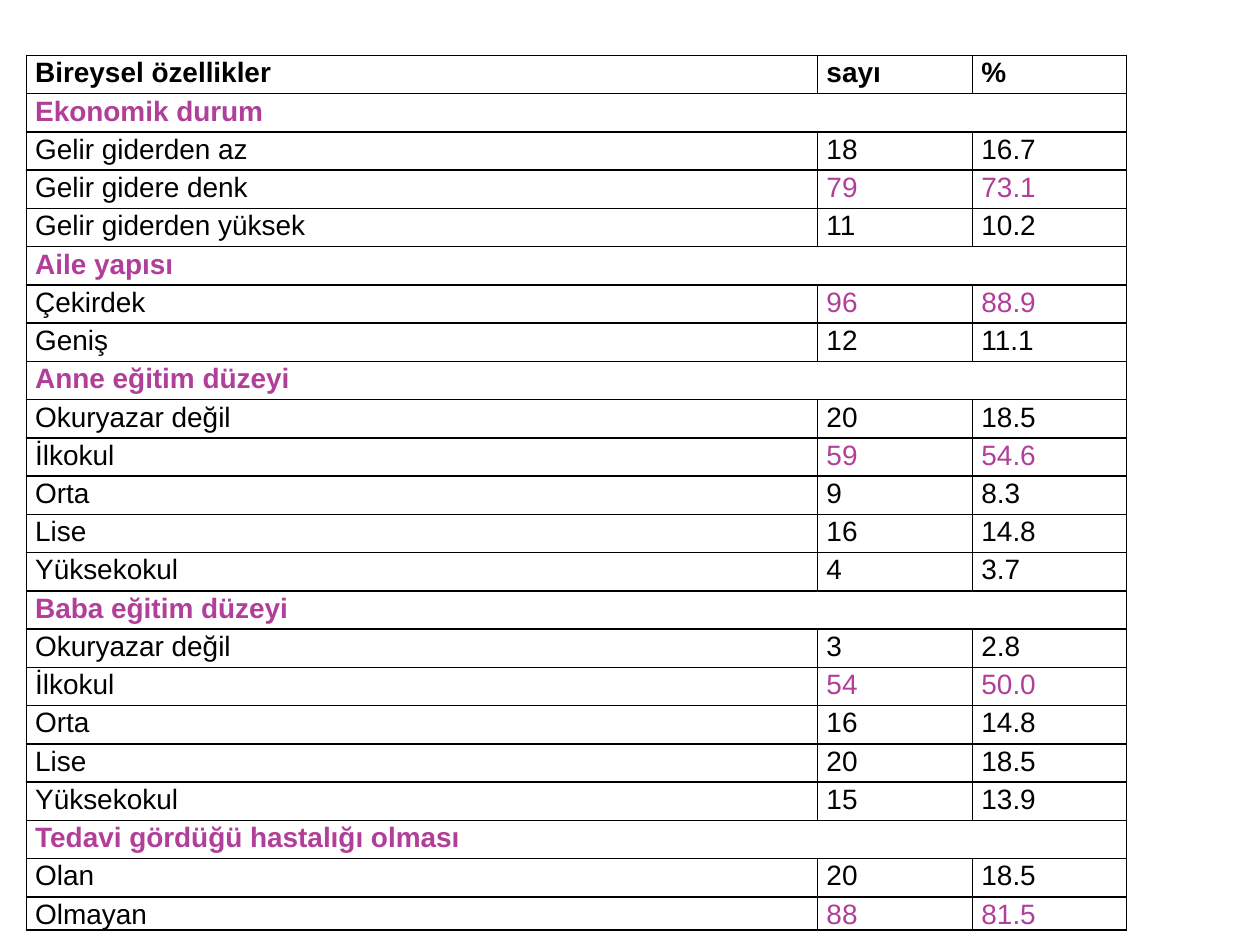
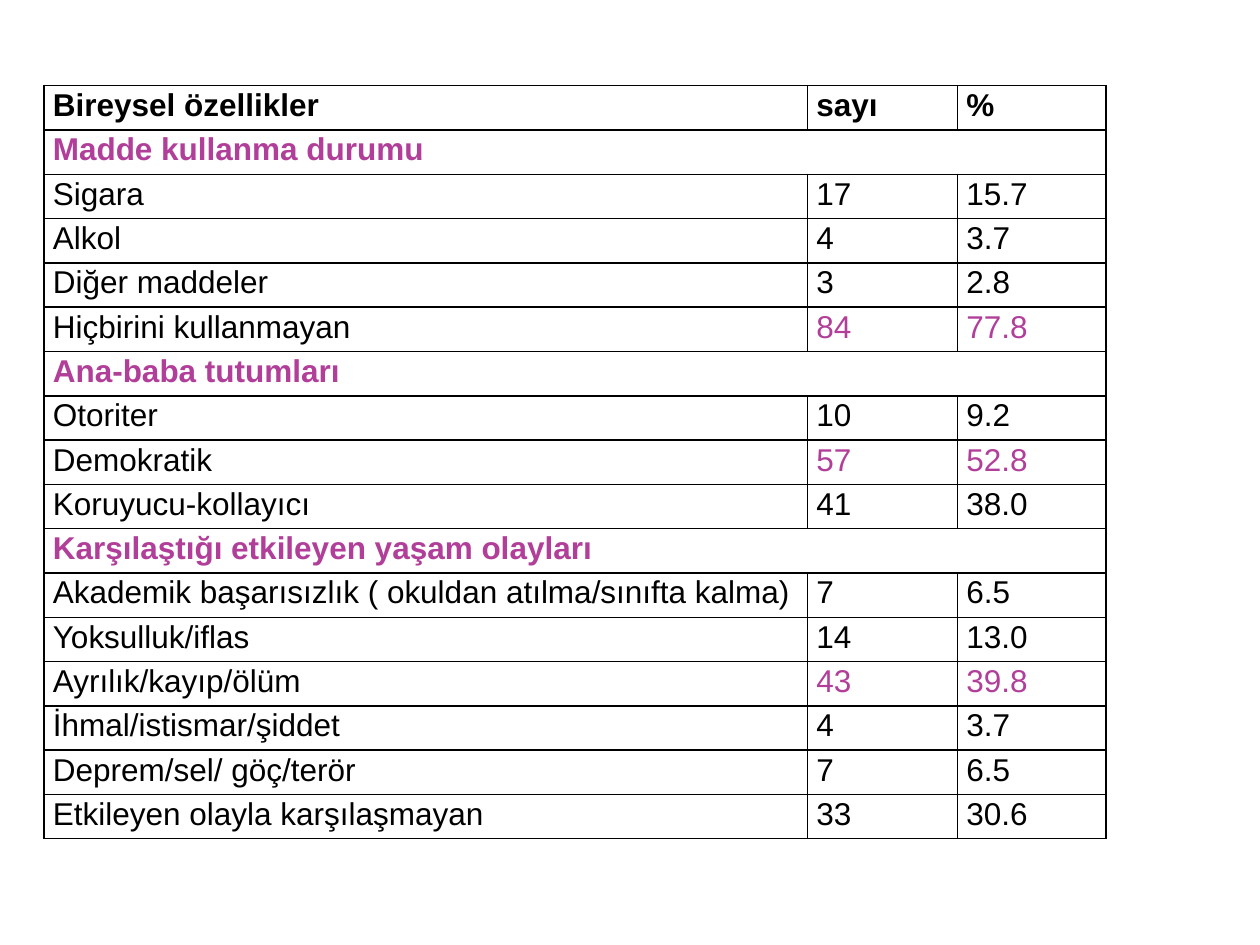
from dataclasses import dataclass

import pptx
import pptx.dml.color
import pptx.oxml
import pptx.oxml.ns
import pptx.util

Inches = pptx.util.Inches
Pt = pptx.util.Pt
RGB = pptx.dml.color.RGBColor.from_string

HEADER = ("Bireysel özellikler", "sayı", "%")

FAMILY_GROUPS = {
    "Ekonomik durum": [
        ("Gelir giderden az", 18, 16.7),
        ("Gelir gidere denk", 79, 73.1),
        ("Gelir giderden yüksek", 11, 10.2),
    ],
    "Aile yapısı": [
        ("Çekirdek", 96, 88.9),
        ("Geniş", 12, 11.1),
    ],
    "Anne eğitim düzeyi": [
        ("Okuryazar değil", 20, 18.5),
        ("İlkokul", 59, 54.6),
        ("Orta", 9, 8.3),
        ("Lise", 16, 14.8),
        ("Yüksekokul", 4, 3.7),
    ],
    "Baba eğitim düzeyi": [
        ("Okuryazar değil", 3, 2.8),
        ("İlkokul", 54, 50.0),
        ("Orta", 16, 14.8),
        ("Lise", 20, 18.5),
        ("Yüksekokul", 15, 13.9),
    ],
    "Tedavi gördüğü hastalığı olması": [
        ("Olan", 20, 18.5),
        ("Olmayan", 88, 81.5),
    ],
}

LIFE_GROUPS = {
    "Madde kullanma durumu": [
        ("Sigara", 17, 15.7),
        ("Alkol", 4, 3.7),
        ("Diğer maddeler", 3, 2.8),
        ("Hiçbirini kullanmayan", 84, 77.8),
    ],
    "Ana-baba tutumları": [
        ("Otoriter", 10, 9.2),
        ("Demokratik", 57, 52.8),
        ("Koruyucu-kollayıcı", 41, 38.0),
    ],
    "Karşılaştığı etkileyen yaşam olayları": [
        ("Akademik başarısızlık ( okuldan atılma/sınıfta kalma)", 7, 6.5),
        ("Yoksulluk/iflas", 14, 13.0),
        ("Ayrılık/kayıp/ölüm", 43, 39.8),
        ("İhmal/istismar/şiddet", 4, 3.7),
        ("Deprem/sel/ göç/terör", 7, 6.5),
        ("Etkileyen olayla karşılaşmayan", 33, 30.6),
    ],
}

# Lengths in inches; last_row is the height of the bottom row when it differs
SLIDES = [
    dict(groups=FAMILY_GROUPS, left=0.21, top=0.44, height=6.94,
         cols=(6.28, 1.23, 1.22), size=16, last_row=0.26),
    dict(groups=LIFE_GROUPS, left=0.35, top=0.68, height=5.98,
         cols=(6.06, 1.19, 1.18), size=18),
]


@dataclass(frozen=True)
class Theme:
    font: str = "Arial"
    text: str = "000000"
    accent: str = "B13F9A"
    border: str = "000000"
    border_width: float = 1
    line_spacing: float = 1.07
    side_margin: float = 0.07


THEME = Theme()


def set_borders(cell):
    """Draw all four edges; line elements must come first in the cell properties."""
    tc_pr = cell._tc.get_or_add_tcPr()
    for i, side in enumerate("LRTB"):
        tc_pr.insert(i, pptx.oxml.parse_xml(
            f'<a:ln{side} {pptx.oxml.ns.nsdecls("a")} w="{Pt(THEME.border_width)}">'
            f'<a:solidFill><a:srgbClr val="{THEME.border}"/></a:solidFill>'
            f'</a:ln{side}>'))


def style_cell(cell):
    cell.margin_left = cell.margin_right = Inches(THEME.side_margin)
    cell.margin_top = cell.margin_bottom = 0
    cell.fill.background()
    set_borders(cell)


def write_cell(cell, text, size, color=THEME.text, bold=False):
    cell.text_frame.text = text
    p = cell.text_frame.paragraphs[0]
    p.line_spacing = THEME.line_spacing
    font = p.runs[0].font
    font.name, font.size, font.bold = THEME.font, Pt(size), bold
    font.color.rgb = RGB(color)


def table_rows(groups):
    """Yield (texts, colours, bold); the largest count of each group is accented."""
    yield HEADER, (THEME.text,) * 3, True
    for title, items in groups.items():
        yield (title,), (THEME.accent,), True
        largest = max(count for _, count, _ in items)
        for label, count, percent in items:
            color = THEME.accent if count == largest else THEME.text
            yield (label, str(count), f"{percent:.1f}"), (THEME.text, color, color), False


def add_survey_table(slide, groups, left, top, height, cols, size, last_row=None):
    rows = list(table_rows(groups))
    table = slide.shapes.add_table(
        len(rows), len(cols), Inches(left), Inches(top),
        Inches(sum(cols)), Inches(height)).table
    table.first_row = table.horz_banding = False
    for column, width in zip(table.columns, cols):
        column.width = Inches(width)
    if last_row:
        for row in table.rows:
            row.height = Inches((height - last_row) / (len(rows) - 1))
        table.rows[len(rows) - 1].height = Inches(last_row)

    for cell in table.iter_cells():
        style_cell(cell)
    for i, (texts, colors, bold) in enumerate(rows):
        if len(texts) == 1:
            table.cell(i, 0).merge(table.cell(i, len(cols) - 1))
        for j, (text, color) in enumerate(zip(texts, colors)):
            write_cell(table.cell(i, j), text, size, color, bold)


def main():
    prs = pptx.Presentation()
    prs.slide_width, prs.slide_height = Inches(10), Inches(7.5)
    for content in SLIDES:
        slide = prs.slides.add_slide(prs.slide_layouts[6])
        add_survey_table(slide, **content)
    prs.save("out.pptx")


if __name__ == "__main__":
    main()
